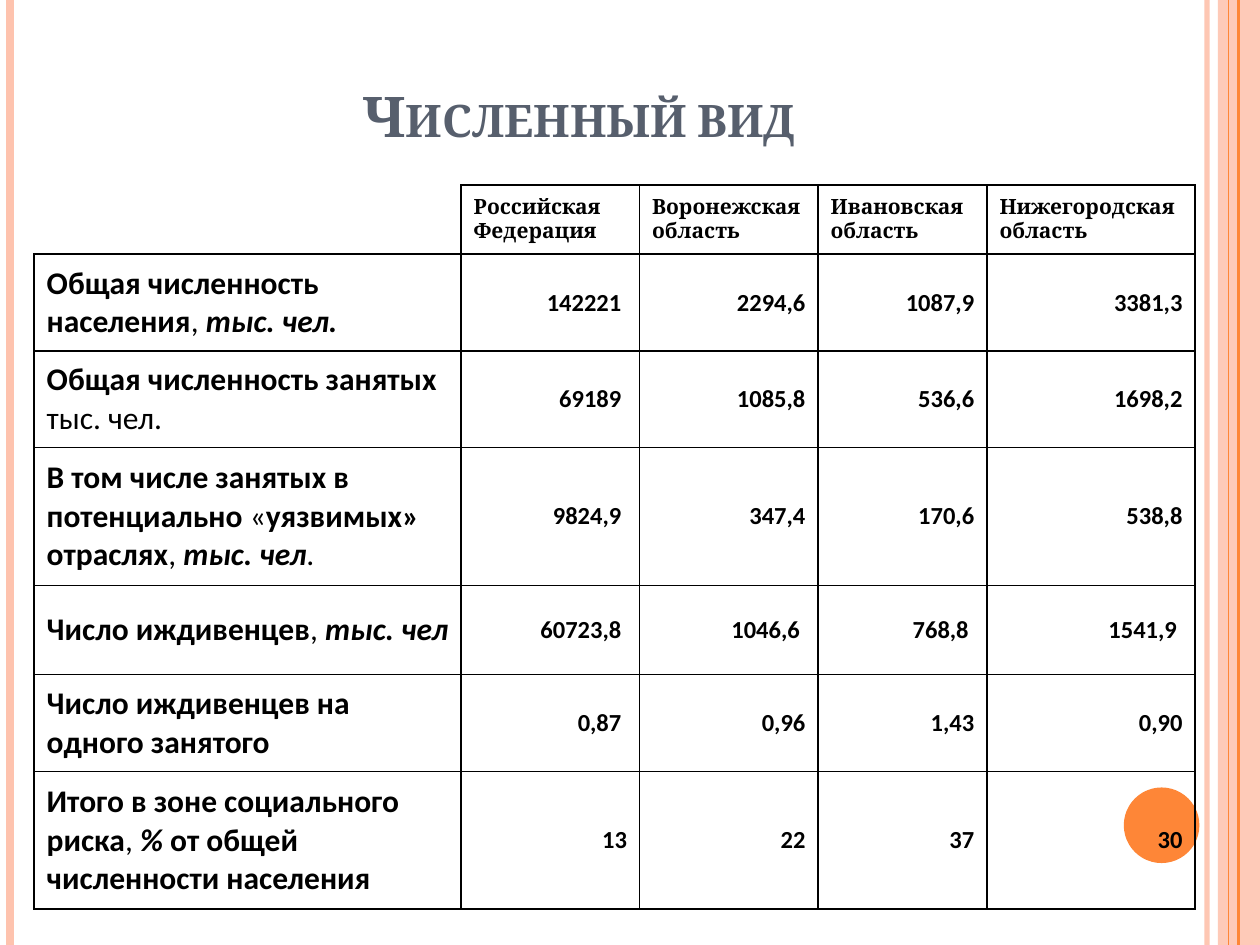
from lxml import etree
from pptx import Presentation
from pptx.dml.color import RGBColor
from pptx.enum.shapes import MSO_CONNECTOR, MSO_SHAPE
from pptx.enum.text import MSO_ANCHOR, PP_ALIGN
from pptx.oxml.ns import qn
from pptx.util import Pt

STRAIGHT = MSO_CONNECTOR.STRAIGHT
RECT, OVAL = MSO_SHAPE.RECTANGLE, MSO_SHAPE.OVAL
MIDDLE, BOTTOM = MSO_ANCHOR.MIDDLE, MSO_ANCHOR.BOTTOM
LEFT, CENTER, RIGHT = PP_ALIGN.LEFT, PP_ALIGN.CENTER, PP_ALIGN.RIGHT

ORANGE = RGBColor(0xFE, 0x86, 0x37)
PEACH = RGBColor(0xFE, 0xC3, 0xAE)
SLATE = RGBColor(0x57, 0x5F, 0x6D)
BLACK = RGBColor(0, 0, 0)

WIDTH, HEIGHT = 720, 540
STRIPES = [
    (689.8, PEACH, 3, 93),
    (5.8, PEACH, 4.5, 100),
    (707.8, ORANGE, 1.5, 100),
    (702, ORANGE, 0.75, 100),
]
COL_WIDTHS = [244, 102, 102, 96.5, 119]
ROW_HEIGHTS = [39.5, 55.3, 55.3, 78.7, 51, 55.3, 78.7]
REGIONS = ["Российская Федерация", "Воронежская область",
           "Ивановская область", "Нижегородская область"]
ROWS = [
    ([("Общая численность населения", "b"), (", ", ""), ("тыс. чел.", "bi")],
     ["142221 ", "2294,6", "1087,9", "3381,3"]),
    ([("Общая численность занятых", "b"), (" тыс. чел.", "")],
     ["69189 ", "1085,8", "536,6", "1698,2"]),
    ([("В том числе занятых в потенциально", "b"), (" «", ""),
      ("уязвимых» отраслях", "b"), (", ", ""), ("тыс. чел", "bi"), (".", "")],
     ["9824,9 ", "347,4", "170,6", "538,8"]),
    ([("Число иждивенцев", "b"), (", ", ""), ("тыс. чел", "bi")],
     ["60723,8 ", "1046,6 ", "768,8 ", "1541,9 "]),
    ([("Число иждивенцев на одного занятого", "b")],
     ["0,87 ", "0,96", "1,43", "0,90"]),
    ([("Итого в зоне социального риска", "b"), (", ", ""), ("% ", "bi"),
      ("от общей численности населения", "b")],
     ["13", "22", "37", "30"]),
]


class Deck:
    heading_font = "Cambria"
    body_font = "Calibri"

    def __init__(self):
        self.prs = Presentation()
        self.prs.slide_width, self.prs.slide_height = Pt(WIDTH), Pt(HEIGHT)
        self.slide = self.prs.slides.add_slide(self.prs.slide_layouts[5])

    def font(self, r, name, size, color, style="b"):
        r.font.name, r.font.size = name, Pt(size)
        r.font.bold, r.font.italic = "b" in style, "i" in style
        r.font.color.rgb = color

    def fade(self, fill, percent):
        if percent < 100:
            color = fill._xPr.find(".//" + qn("a:srgbClr"))
            etree.SubElement(color, qn("a:alpha"), val=str(percent * 1000))

    def title(self, text, x, y, w, h):
        sp = self.slide.shapes.title
        sp.left, sp.top, sp.width, sp.height = Pt(x), Pt(y), Pt(w), Pt(h)
        tf = sp.text_frame
        tf.text = text
        tf.vertical_anchor = BOTTOM
        p = tf.paragraphs[0]
        p.alignment = CENTER
        r = p.runs[0]
        self.font(r, self.heading_font, 32, SLATE)
        r.font._element.set("cap", "small")

    def stripe(self, x, color, width, opacity):
        ln = self.slide.shapes.add_connector(STRAIGHT, Pt(x), 0, Pt(x), Pt(HEIGHT))
        ln.line.color.rgb = color
        ln.line.width = Pt(width)
        self.fade(ln.line.fill, opacity)
        etree.SubElement(ln._element.spPr, qn("a:effectLst"))

    def shape(self, kind, x, y, w, h, color, opacity=100):
        sp = self.slide.shapes.add_shape(kind, Pt(x), Pt(y), Pt(w), Pt(h))
        sp.shadow.inherit = False
        sp.fill.solid()
        sp.fill.fore_color.rgb = color
        self.fade(sp.fill, opacity)
        sp.line.fill.background()

    def borders(self, cell, sides):
        tc_pr = cell._tc.get_or_add_tcPr()
        for i, side in enumerate("LRTB"):
            ln = etree.Element(qn("a:ln" + side), w=str(Pt(1)))
            if side in sides:
                fill = etree.SubElement(ln, qn("a:solidFill"))
                etree.SubElement(fill, qn("a:srgbClr"), val=str(BLACK))
            else:
                etree.SubElement(ln, qn("a:noFill"))
            tc_pr.insert(i, ln)

    def cell(self, cell, parts, font, size, align=LEFT, sides="LRTB"):
        cell.fill.background()
        cell.vertical_anchor = MIDDLE
        self.borders(cell, sides)
        p = cell.text_frame.paragraphs[0]
        p.alignment = align
        for text, style in parts:
            r = p.add_run()
            r.text = text
            self.font(r, font, size, BLACK, style)

    def table(self, x, y, widths, heights, headers, rows):
        table = self.slide.shapes.add_table(
            len(heights), len(widths), Pt(x), Pt(y),
            Pt(sum(widths)), Pt(sum(heights))).table
        table.first_row = table.horz_banding = False
        for col, width in zip(table.columns, widths):
            col.width = Pt(width)
        for row, height in zip(table.rows, heights):
            row.height = Pt(height)
        self.cell(table.cell(0, 0), [], self.heading_font, 12, sides="RB")
        for j, text in enumerate(headers, 1):
            self.cell(table.cell(0, j), [(text, "b")], self.heading_font, 12)
        for i, (label, values) in enumerate(rows, 1):
            self.cell(table.cell(i, 0), label, self.body_font, 18)
            for j, value in enumerate(values, 1):
                self.cell(table.cell(i, j), [(value, "b")], self.body_font, 14, RIGHT)


def main():
    deck = Deck()
    deck.shape(RECT, 696, 0, 24, HEIGHT, PEACH, 87)
    for stripe in STRIPES:
        deck.stripe(*stripe)
    deck.shape(OVAL, 642.2, 450, 43.2, 43.2, ORANGE)
    deck.title("Численный вид", 36.7, 15.1, 588.2, 73.5)
    deck.table(19.5, 105.8, COL_WIDTHS, ROW_HEIGHTS, REGIONS, ROWS)
    deck.prs.save("out.pptx")


if __name__ == "__main__":
    main()
